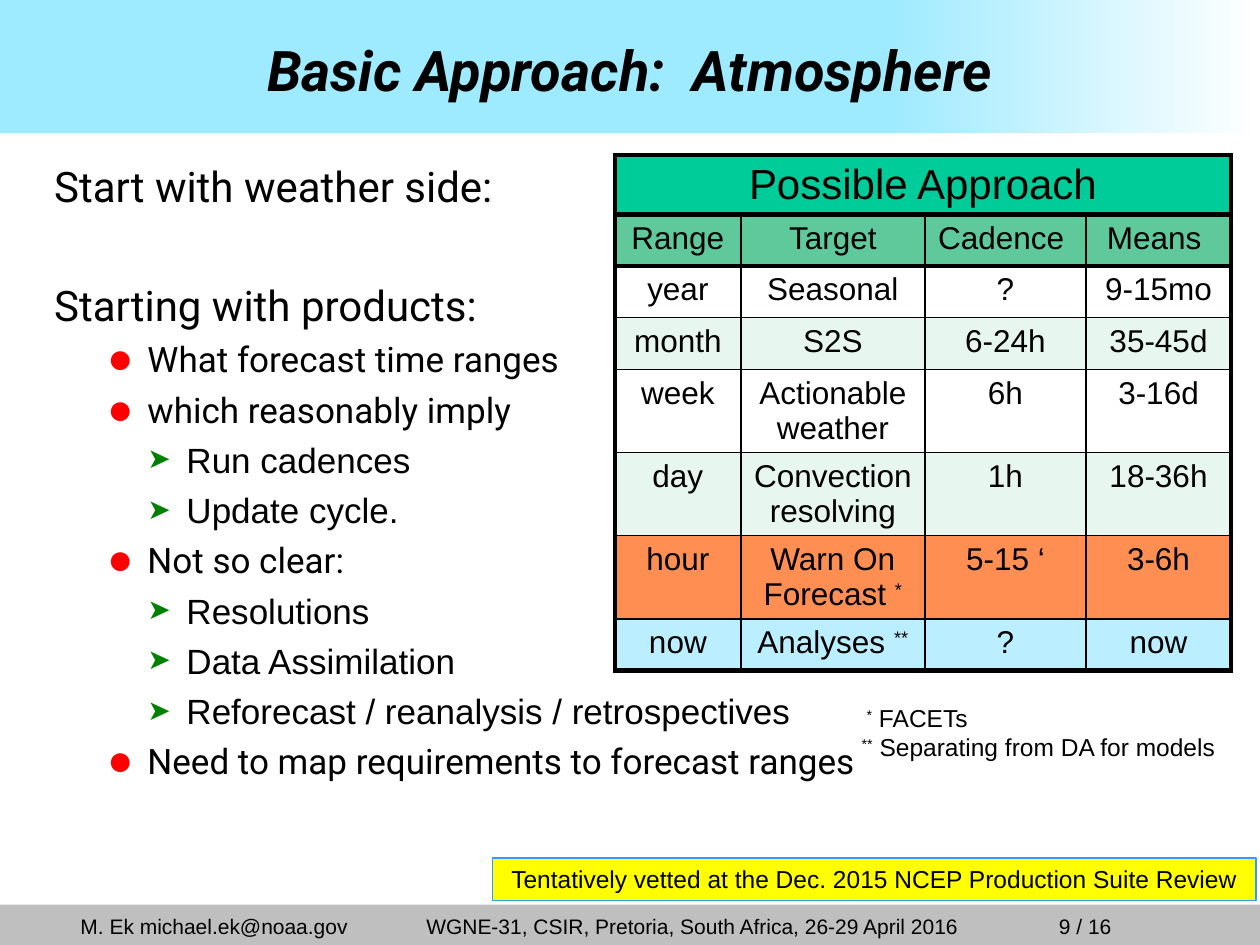
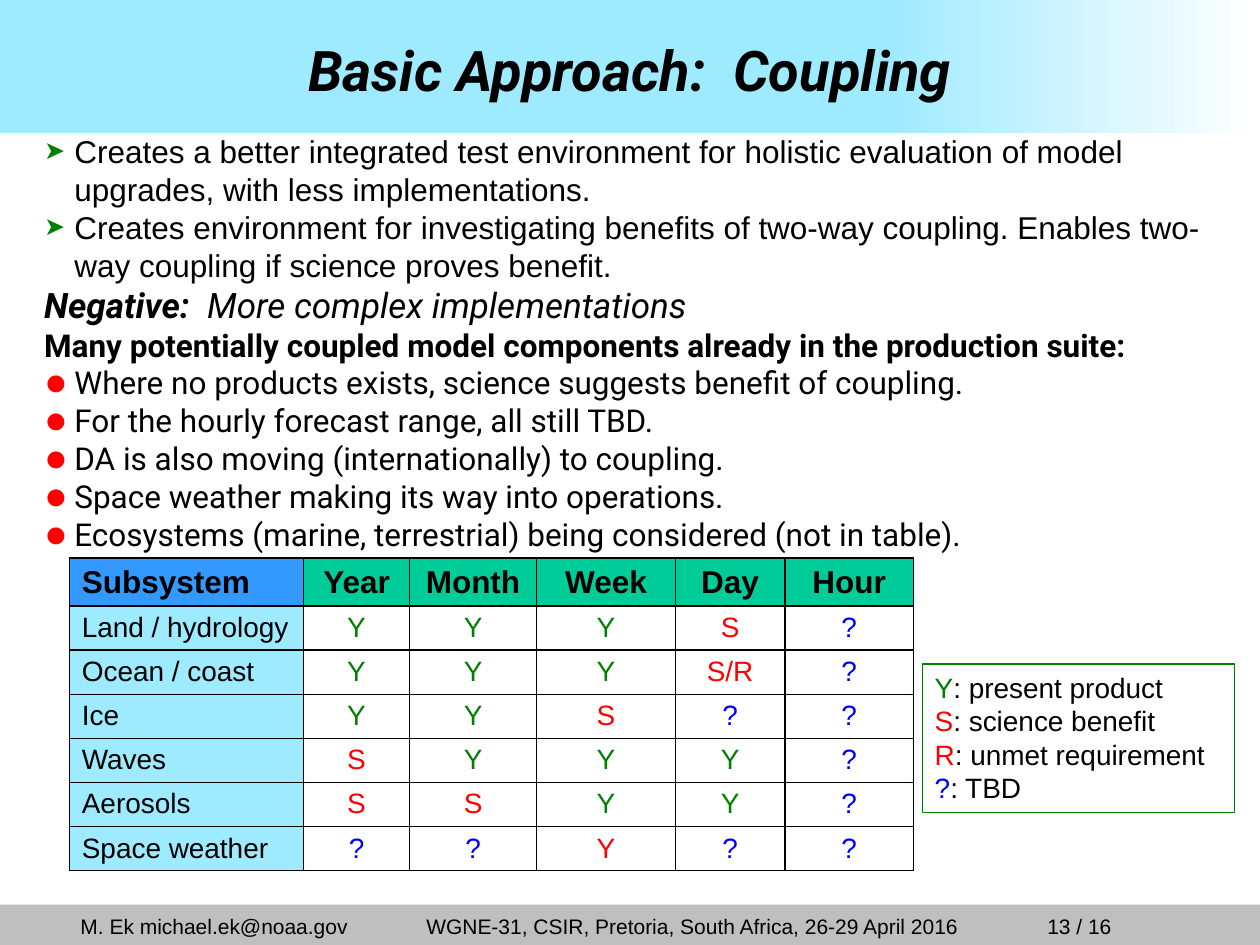
from pptx import Presentation, util as u
from pptx.dml.color import RGBColor
from pptx.enum import shapes as es, text as et
from pptx.oxml import parse_xml
from pptx.oxml.ns import nsdecls

PX = 9144
BLACK, WHITE, SKY, GREEN, RED, BLUE = "000000", "FFFFFF", "9EEAFF", "008000", "FF0000", "0000FF"
MINT, AZURE, GREY = "00CC99", "3399FF", "BFBFBF"
LEFT, MID, RIGHT = et.PP_ALIGN.LEFT, et.PP_ALIGN.CENTER, et.PP_ALIGN.RIGHT
BULLETS = {1: ("●", RED, 125), 2: ("➤", GREEN, 80)}
rgb = RGBColor.from_string


def write(para, parts, size, face="Arial", align=LEFT, bold=False):
    para.alignment = align
    for words, hue, *sup in [(parts, BLACK)] if isinstance(parts, str) else parts:
        run = para.add_run()
        run.text = words
        font = run.font
        font.size, font.name, font.bold = u.Pt(size), face, bold
        font.color.rgb = rgb(hue)
        if sup:
            run._r.get_or_add_rPr().set("baseline", "30000")


def dress(cell, fill, edges):
    props = cell._tc.get_or_add_tcPr()
    for side, width in zip("LRTB", edges):
        props.append(parse_xml(
            f'<a:ln{side} {nsdecls("a")} w="{width * 12700}"><a:solidFill>'
            f'<a:srgbClr val="{BLACK}"/></a:solidFill></a:ln{side}>'))
    if fill:
        cell.fill.solid()
        cell.fill.fore_color.rgb = rgb(fill)
    else:
        cell.fill.background()


prs = Presentation()
prs.slide_width, prs.slide_height = 1000 * PX, 750 * PX

pages = [
    ("Basic Approach:  Atmosphere", "9 / 16", (25, 122, 919, 597), [
        (0, "Start with weather side:", 24, "Roboto", 0),
        (0, "Starting with products:", 24, "Roboto", 39.3),
        (1, "What forecast time ranges", 20, "Roboto", 4.7),
        (1, "which reasonably imply", 20, "Roboto", 4.7),
        (2, "Run cadences", 20, "Arial", 4.7),
        (2, "Update cycle.", 20, "Arial", 4.7),
        (1, "Not so clear:", 20, "Roboto", 4.7),
        (2, "Resolutions", 20, "Arial", 4.7),
        (2, "Data Assimilation", 20, "Arial", 4.7),
        (2, "Reforecast / reanalysis / retrospectives", 20, "Arial", 4.7),
        (1, "Need to map requirements to forecast ranges", 20, "Roboto", 4.7),
    ], {0: (8, 0), 1: (82, -32), 2: (113, -31)}),
    ("Basic Approach:  Coupling", "13 / 16", (25, 100, 950, 599), [
        (2, "Creates a better integrated test environment for holistic evaluation of model "
            "upgrades, with less implementations.", 18, "Arial", 0),
        (2, "Creates environment for investigating benefits of two-way coupling. Enables "
            "two-way coupling if science proves benefit.", 18, "Arial", 0),
        (0, [("Negative:  ", BLACK), ("More complex implementations", BLACK)], 20, "Roboto", 0),
        (0, "Many potentially coupled model components already in the production suite:",
         18, "Roboto", 0),
        (1, "Where no products exists, science suggests benefit of coupling.", 18, "Roboto", 0),
        (1, "For the hourly forecast range, all still TBD.", 18, "Roboto", 0),
        (1, "DA is also moving (internationally) to coupling.", 18, "Roboto", 0),
        (1, "Space weather making its way into operations.", 18, "Roboto", 0),
        (1, "Ecosystems (marine, terrestrial) being considered (not in table).", 18, "Roboto", 0),
    ], {0: (0, 0), 1: (24, -24), 2: (24, -24)}),
]
foot = [(54, 245, LEFT, "M. Ek michael.ek@noaa.gov"),
        (322, 455, MID, "WGNE-31, CSIR, Pretoria, South Africa, 26-29 April 2016")]

slides = []
for head, num, area, items, dents in pages:
    slide = prs.slides.add_slide(prs.slide_layouts[1])
    slides.append(slide)
    title, body = slide.placeholders

    for top, high in ((718, 32), (0, 106)):
        band = slide.shapes.add_shape(es.MSO_SHAPE.RECTANGLE, 0, top * PX, 1000 * PX, high * PX)
        band.shadow.inherit = False
        band.line.fill.background()
        if top:
            band.fill.solid()
            band.fill.fore_color.rgb = rgb(GREY)
        else:
            band.fill.gradient()
            band.fill.gradient_angle = 0
            for stop, hue, pos in zip(band.fill.gradient_stops, (SKY, WHITE), (0.7, 1)):
                stop.color.rgb, stop.position = rgb(hue), pos
    for left, wide, align, words in foot + [(801, 91, RIGHT, num)]:
        frame = slide.shapes.add_textbox(left * PX, 720 * PX, wide * PX, 30 * PX).text_frame
        frame.word_wrap, frame.vertical_anchor = True, et.MSO_ANCHOR.BOTTOM
        write(frame.paragraphs[0], words, 12, align=align)

    for holder, box in ((title, (25, 16, 950, 78)), (body, area)):
        holder.left, holder.top, holder.width, holder.height = (n * PX for n in box)
        holder.text_frame.auto_size = et.MSO_AUTO_SIZE.NONE
        slide.shapes._spTree.append(holder._element)
    title.text_frame.vertical_anchor = et.MSO_ANCHOR.MIDDLE
    write(title.text_frame.paragraphs[0], head, 32, "Roboto", MID, True)
    title.text_frame.paragraphs[0].runs[0].font.italic = True

    frame = body.text_frame
    for i, (level, words, size, face, gap) in enumerate(items):
        para = frame.add_paragraph() if i else frame.paragraphs[0]
        para.level = level
        props = para._p.get_or_add_pPr()
        margin, dent = dents[level]
        props.set("marL", str(margin * PX))
        props.set("indent", str(dent * PX))
        if level:
            mark, hue, scale = BULLETS[level]
            marks = (f'buClr {nsdecls("a")}><a:srgbClr val="{hue}"/></a:buClr',
                     f'buSzPct {nsdecls("a")} val="{scale * 1000}"/',
                     f'buFont {nsdecls("a")} typeface="Arial"/',
                     f'buChar {nsdecls("a")} char="{mark}"/')
        else:
            marks = (f'buNone {nsdecls("a")}/',)
        for tag in marks:
            props.append(parse_xml(f"<a:{tag}>"))
        para.space_before = u.Pt(gap)
        write(para, words, size, face)

atmos, couple = slides

grid = [
    (MINT, "Possible Approach", "", "", ""),
    ("60C99C", "Range ", "Target", "Cadence ", "Means "),
    (WHITE, "year", "Seasonal", "?", "9-15mo"),
    ("E7F6EF", "month", "S2S", "6-24h", "35-45d"),
    (WHITE, "week", "Actionable weather", "6h", "3-16d"),
    ("E7F6EF", "day", "Convection resolving", "1h", "18-36h"),
    ("FF8E53", "hour", [("Warn On Forecast ", BLACK), ("*", BLACK, True)], "5-15 ‘", "3-6h"),
    ("BBEFFF", "now", [("Analyses ", BLACK), ("**", BLACK, True)], "?", "now"),
]
plan = atmos.shapes.add_table(8, 4, 488 * PX, 123 * PX, 489 * PX, 408 * PX).table
plan.first_row = plan.horz_banding = False
for col, wide in zip(plan.columns, (100, 146, 128, 115)):
    col.width = wide * PX
for row, high in zip(plan.rows, (46, 41, 41, 41, 66, 66, 66, 41)):
    row.height = high * PX
plan.cell(0, 0).merge(plan.cell(0, 3))
for r, (fill, *texts) in enumerate(grid):
    for c, words in enumerate(texts):
        cell = plan.cell(r, c)
        thick = (r == 0 or c == 0, r == 0 or c == 3, r < 3, r < 2 or r == 7)
        dress(cell, fill, [3 if t else 1 for t in thick])
        if words:
            write(cell.text_frame.paragraphs[0], words, 18 if r else 24, align=MID)

for left, top, star, words in ((678, 553, "*", " FACETs"),
                               (674, 576, "**", " Separating from DA for models")):
    frame = atmos.shapes.add_textbox(left * PX, top * PX, 320 * PX, 34 * PX).text_frame
    frame.word_wrap = True
    write(frame.paragraphs[0], [(star, BLACK, True), (words, BLACK)], 14)

lines = couple.placeholders[1].text_frame.paragraphs
for run in lines[2].runs:
    run.font.italic = True
for run in (lines[2].runs[0], lines[3].runs[0]):
    run.font.bold = True

hues = {"Y": GREEN, "S": RED, "S/R": RED, "?": BLUE}
parts = [
    ("Subsystem", "Year Month Week Day Hour"),
    ("Land / hydrology", "Y Y Y S ?"),
    ("Ocean / coast", "Y Y Y S/R ?"),
    ("Ice", "Y Y S ? ?"),
    ("Waves", "S Y Y Y ?"),
    ("Aerosols", "S S Y Y ?"),
    ("Space weather", "? ? Y ? ?"),
]
matrix = couple.shapes.add_table(7, 6, 55 * PX, 443 * PX, 670 * PX, 248 * PX).table
matrix.first_row = matrix.horz_banding = False
for col, wide in zip(matrix.columns, (186, 84, 101, 110, 87, 102)):
    col.width = wide * PX
for r, (name, marks) in enumerate(parts):
    matrix.rows[r].height = (35 if r else 38) * PX
    for c, words in enumerate([name] + marks.split()):
        cell = matrix.cell(r, c)
        side, rest = (SKY, None) if r else (AZURE, MINT)
        dress(cell, rest if c else side, [1] * 4)
        hue = RED if (name, words) == ("Space weather", "Y") else hues.get(words, BLACK)
        write(cell.text_frame.paragraphs[0], [(words, hue)], 16 if r else 18,
              align=MID if c else LEFT, bold=r == 0)

key = [[(mark, hues.get(mark, RED)), (words, BLACK)] for mark, words in (
    ("Y", ": present product"), ("S", ": science benefit"),
    ("R", ": unmet requirement"), ("?", ": TBD"))]
vetted = ["Tentatively vetted at the Dec. 2015 NCEP Production Suite Review"]
for slide, box, fill, edge, rows, size, align in (
        (atmos, (391, 681, 606, 34), "FFFF00", AZURE, vetted, 14, MID),
        (couple, (732, 527, 248, 118), None, GREEN, key, 16, LEFT)):
    note = slide.shapes.add_shape(es.MSO_SHAPE.RECTANGLE, *(n * PX for n in box))
    note.shadow.inherit = False
    note.line.color.rgb, note.line.width = rgb(edge), u.Pt(0.75)
    if fill:
        note.fill.solid()
        note.fill.fore_color.rgb = rgb(fill)
    else:
        note.fill.background()
    frame = note.text_frame
    frame.word_wrap, frame.vertical_anchor = True, et.MSO_ANCHOR.TOP
    for i, words in enumerate(rows):
        write(frame.add_paragraph() if i else frame.paragraphs[0], words, size, align=align)

prs.save("out.pptx")
